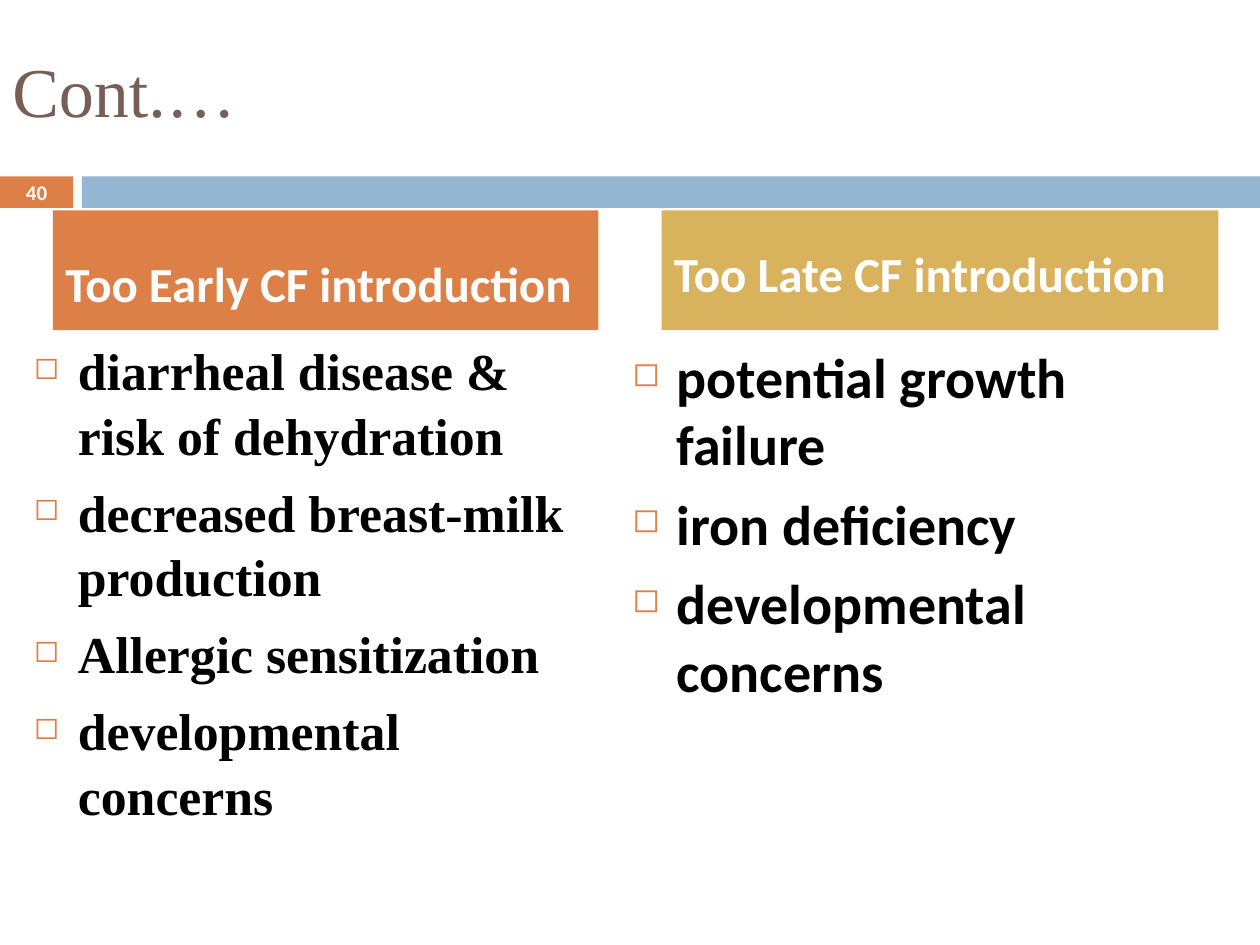
from dataclasses import dataclass

from lxml.etree import SubElement
from pptx import Presentation
from pptx.dml.color import RGBColor
from pptx.enum.shapes import MSO_SHAPE
from pptx.enum.text import MSO_ANCHOR, PP_ALIGN
from pptx.oxml.ns import qn
from pptx.util import Inches, Pt

ORANGE = RGBColor(0xDD, 0x80, 0x47)
BLUE = RGBColor(0x94, 0xB6, 0xD2)
GOLD = RGBColor(0xD8, 0xB2, 0x5C)
BROWN = RGBColor(0x77, 0x5F, 0x55)
WHITE = RGBColor(0xFF, 0xFF, 0xFF)
BLACK = RGBColor(0, 0, 0)
SANS = "Calibri"
SERIF = "Times New Roman"


@dataclass
class Box:
    left: float
    top: float
    width: float
    height: float

    def lengths(self) -> list:
        return [Inches(n) for n in (self.left, self.top, self.width, self.height)]


@dataclass
class Style:
    font: str
    size: float
    color: RGBColor
    bold: bool = True


@dataclass
class Header:
    box: Box
    fill: RGBColor
    text: str
    inset: float


@dataclass
class Column:
    box: Box
    style: Style
    items: list[str]
    pitch: float


HEADERS = [
    Header(Box(0.42, 1.67, 4.33, 0.95), ORANGE, "Too Early CF introduction", 0.25),
    Header(Box(5.25, 1.67, 4.42, 0.95), GOLD, "Too Late CF introduction", 0.09),
]
COLUMNS = [
    Column(
        Box(0.17, 2.62, 4.5, 3.47),
        Style(SERIF, 29.6, BLACK),
        [
            "diarrheal disease & risk of dehydration",
            "decreased breast-milk production",
            "Allergic sensitization",
            "developmental concerns",
        ],
        1.04,
    ),
    Column(
        Box(4.92, 2.67, 4.92, 3.92),
        Style(SANS, 32, BLACK),
        ["potential growth failure", "iron deficiency", "developmental concerns"],
        1.0,
    ),
]


def add_bar(slide, box: Box, fill: RGBColor):
    bar = slide.shapes.add_shape(MSO_SHAPE.RECTANGLE, *box.lengths())
    bar.shadow.inherit = False
    bar.fill.solid()
    bar.fill.fore_color.rgb = fill
    bar.line.fill.background()
    return bar


def write(shape, text: str, style: Style, align=PP_ALIGN.LEFT, anchor=MSO_ANCHOR.MIDDLE):
    frame = shape.text_frame
    frame.word_wrap = True
    frame.vertical_anchor = anchor
    frame.text = text
    for para in frame.paragraphs:
        para.alignment = align
        for run in para.runs:
            run.font.name = style.font
            run.font.size = Pt(style.size)
            run.font.bold = style.bold
            run.font.color.rgb = style.color
    return frame


def add_text(slide, box: Box, text: str, style: Style, **place):
    return write(slide.shapes.add_textbox(*box.lengths()), text, style, **place)


def add_bullet(para) -> None:
    props = para._p.get_or_add_pPr()
    props.set("marL", str(Inches(0.35)))
    props.set("indent", str(-Inches(0.35)))
    color = SubElement(props, qn("a:buClr"))
    SubElement(color, qn("a:srgbClr"), val=str(ORANGE))
    SubElement(props, qn("a:buSzPct"), val="60000")
    SubElement(props, qn("a:buChar"), char="◻")


def add_column(slide, col: Column) -> None:
    frame = add_text(slide, col.box, "\n".join(col.items), col.style, anchor=MSO_ANCHOR.TOP)
    for para in frame.paragraphs:
        para.space_before = Pt(7)
        para.line_spacing = col.pitch
        add_bullet(para)


def add_header(slide, head: Header) -> None:
    bar = add_bar(slide, head.box, head.fill)
    frame = write(bar, head.text, Style(SANS, 28, WHITE))
    frame.margin_top = Inches(head.inset)


def main() -> None:
    deck = Presentation()
    deck.slide_width = Inches(10)
    deck.slide_height = Inches(7.5)
    slide = deck.slides.add_slide(deck.slide_layouts[6])
    add_bar(slide, Box(0, 1.4, 0.58, 0.25), ORANGE)
    add_bar(slide, Box(0.65, 1.4, 9.35, 0.25), BLUE)
    add_text(slide, Box(0, 0.17, 10, 1.08), "Cont.…", Style(SERIF, 40, BROWN, False))
    for col in COLUMNS:
        add_column(slide, col)
    for head in HEADERS:
        add_header(slide, head)
    add_text(slide, Box(0, 1.39, 0.58, 0.27), "40", Style(SANS, 11.9, WHITE), align=PP_ALIGN.CENTER)
    deck.save("out.pptx")


if __name__ == "__main__":
    main()
